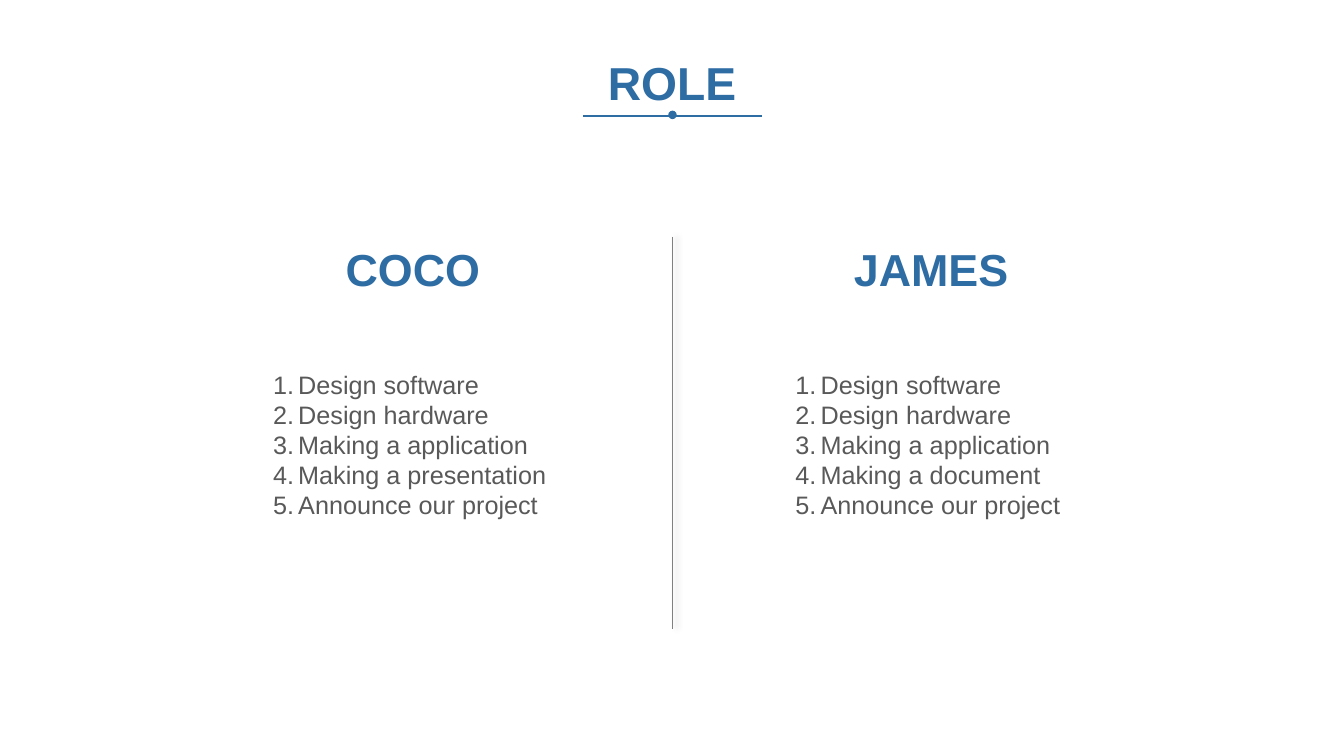
from dataclasses import dataclass

from lxml import etree
from pptx import Presentation
from pptx.dml.color import RGBColor
from pptx.enum.shapes import MSO_CONNECTOR, MSO_SHAPE
from pptx.enum.text import MSO_AUTO_SIZE, PP_ALIGN
from pptx.oxml.ns import qn
from pptx.util import Inches, Pt

TITLE = "ROLE"
ROLES = [
    {"name": "COCO", "name_box": (3.32, 1.55), "task_box": (2.61, 2.97),
     "tasks": ["Design software", "Design hardware", "Making a application",
               "Making a presentation", "Announce our project"]},
    {"name": "JAMES", "name_box": (8.36, 1.75), "task_box": (7.79, 2.89),
     "tasks": ["Design software", "Design hardware", "Making a application",
               "Making a document", "Announce our project"]},
]


@dataclass(frozen=True)
class Theme:
    font: str = "Arial"
    accent: str = "2E6CA4"
    body: str = "595959"
    divider: str = "808080"
    shadow: str = "000000"
    title_size: float = 33
    name_size: float = 32
    task_size: float = 18
    task_pitch: float = 21.6


THEME = Theme()
CENTER = 6.67
RULE_WIDTH, RULE_TOP, DOT = 1.78, 1.15, 0.07
COLUMN_TOP, COLUMN_BOTTOM, TASK_TOP = 2.35, 6.24, 3.61
NUMBER_INDENT = Inches(0.25)


def add_numbering(para):
    properties = para._p.get_or_add_pPr()
    properties.set("marL", str(NUMBER_INDENT))
    properties.set("indent", str(-NUMBER_INDENT))
    etree.SubElement(properties, qn("a:buFont"), typeface="+mj-lt")
    etree.SubElement(properties, qn("a:buAutoNum"), type="arabicPeriod")


def add_text(page, lines, left, top, width, height, *, size, color,
             bold=False, wrap=False, align=PP_ALIGN.LEFT, numbered=False, pitch=None):
    box = page.shapes.add_textbox(Inches(left), Inches(top), Inches(width), Inches(height))
    frame = box.text_frame
    frame.word_wrap = wrap
    frame.auto_size = MSO_AUTO_SIZE.SHAPE_TO_FIT_TEXT
    for index, line in enumerate(lines):
        para = frame.add_paragraph() if index else frame.paragraphs[0]
        para.alignment = align
        if pitch:
            para.line_spacing = Pt(pitch)
        if numbered:
            add_numbering(para)
        span = para.add_run()
        span.text = line
        span.font.name = THEME.font
        span.font.size = Pt(size)
        span.font.bold = bold
        span.font.color.rgb = RGBColor.from_string(color)


def add_line(page, start, end, color, weight, shadowed=False):
    line = page.shapes.add_connector(
        MSO_CONNECTOR.STRAIGHT, *(Inches(value) for value in (*start, *end)))
    line.line.color.rgb = RGBColor.from_string(color)
    line.line.width = Pt(weight)
    effects = etree.SubElement(line._element.spPr, qn("a:effectLst"))
    if shadowed:
        shadow = etree.SubElement(effects, qn("a:outerShdw"), blurRad=str(Pt(4)),
                                  dist=str(Pt(3)), dir="0", algn="l", rotWithShape="0")
        tint = etree.SubElement(shadow, qn("a:srgbClr"), val=THEME.shadow)
        etree.SubElement(tint, qn("a:alpha"), val="40000")


def add_title(page):
    add_text(page, [TITLE], 5.92, 0.49, 1.49, 0.66, size=THEME.title_size,
             color=THEME.accent, bold=True, align=PP_ALIGN.CENTER)
    add_line(page, (CENTER - RULE_WIDTH / 2, RULE_TOP),
             (CENTER + RULE_WIDTH / 2, RULE_TOP), THEME.accent, 1)
    dot = page.shapes.add_shape(
        MSO_SHAPE.OVAL, Inches(CENTER - DOT / 2), Inches(RULE_TOP - DOT / 2 - 0.01),
        Inches(DOT), Inches(DOT))
    dot.shadow.inherit = False
    dot.fill.solid()
    dot.fill.fore_color.rgb = RGBColor.from_string(THEME.accent)
    dot.line.color.rgb = RGBColor.from_string(THEME.accent)
    dot.line.width = Pt(1)


def add_role(page, role):
    left, width = role["name_box"]
    add_text(page, [role["name"]], left, COLUMN_TOP, width, 0.64, size=THEME.name_size,
             color=THEME.accent, bold=True, align=PP_ALIGN.CENTER)
    left, width = role["task_box"]
    add_text(page, role["tasks"], left, TASK_TOP, width, 1.62, size=THEME.task_size,
             color=THEME.body, wrap=True, numbered=True, pitch=THEME.task_pitch)


def main():
    deck = Presentation()
    deck.slide_width, deck.slide_height = Inches(13.33), Inches(7.5)
    page = deck.slides.add_slide(deck.slide_layouts[6])
    add_title(page)
    add_line(page, (CENTER, COLUMN_TOP), (CENTER, COLUMN_BOTTOM),
             THEME.divider, 0.5, shadowed=True)
    for role in ROLES:
        add_role(page, role)
    deck.save("out.pptx")


if __name__ == "__main__":
    main()
